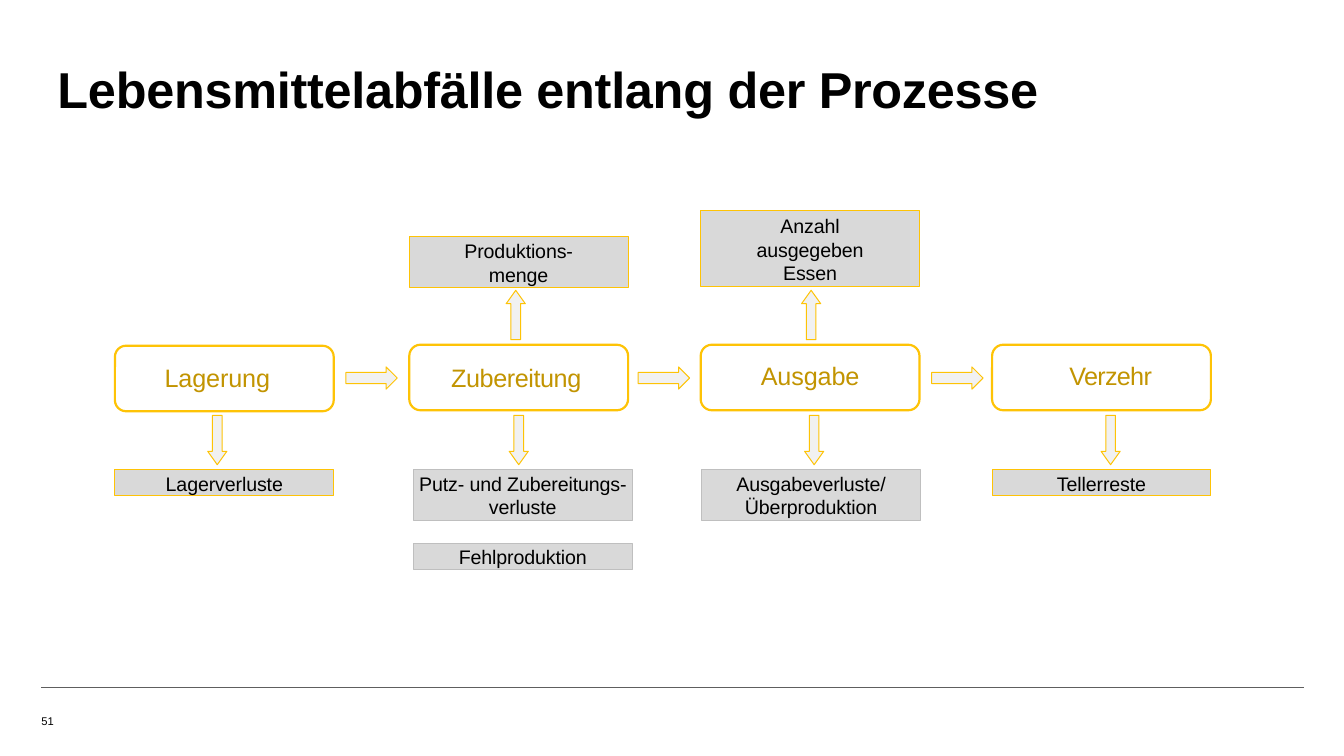
from dataclasses import dataclass

from pptx import Presentation
from pptx.dml.color import RGBColor
from pptx.enum.shapes import MSO_CONNECTOR, MSO_SHAPE
from pptx.enum.text import MSO_ANCHOR, PP_ALIGN
from pptx.oxml.ns import qn
from pptx.util import Emu, Pt

RECTANGLE = MSO_SHAPE.RECTANGLE
ROUNDED = MSO_SHAPE.ROUNDED_RECTANGLE
RIGHT, UP, DOWN = MSO_SHAPE.RIGHT_ARROW, MSO_SHAPE.UP_ARROW, MSO_SHAPE.DOWN_ARROW
STRAIGHT = MSO_CONNECTOR.STRAIGHT
TOP, MIDDLE, BOTTOM = MSO_ANCHOR.TOP, MSO_ANCHOR.MIDDLE, MSO_ANCHOR.BOTTOM
LEFT, CENTER = PP_ALIGN.LEFT, PP_ALIGN.CENTER

EMU_PER_PX = 9144
BOX_WIDTH = 217
STAGE_HEIGHT = 65
LABEL_HEIGHT = 32
LOSS_TOP = 466


@dataclass(frozen=True)
class Theme:
    font: str = "Arial"
    black: str = "000000"
    gold: str = "FEC306"
    dark_gold: str = "C29401"
    box_grey: str = "D9D9D9"
    edge_grey: str = "BFBFBF"
    arrow_grey: str = "F1F1F1"
    rule_grey: str = "5E5E5E"
    title_size: int = 36
    stage_size: int = 18
    box_size: int = 14
    number_size: int = 8


THEME = Theme()

STAGES = [
    ("Lagerung", 114, 343, 158, 357, 115, -10),
    ("Zubereitung", 406, 342, 438, 357, 148, -30),
    ("Ausgabe", 695, 342, 750, 355, 107, -10),
    ("Verzehr", 984, 342, 1054, 355, 95, -50),
]
QUANTITIES = [
    ("Produktions-\vmenge", 406, 235, 50, TOP),
    ("Anzahl\vausgegeben\vEssen", 695, 209, 75, MIDDLE),
]
LOSSES = [
    ("Lagerverluste", 114, LOSS_TOP, 26, THEME.gold),
    ("Putz- und Zubereitungs-verluste", 410, LOSS_TOP, 50, THEME.edge_grey),
    ("Fehlproduktion", 410, 539, 26, THEME.edge_grey),
    ("Ausgabeverluste/\vÜberproduktion", 696, LOSS_TOP, 50, THEME.edge_grey),
    ("Tellerreste", 984, LOSS_TOP, 26, THEME.gold),
]
ARROWS = [
    (RIGHT, 364, 51, 22, 0.5, (343, 633, 924)),
    (DOWN, 412, 19, 49, 0.7, (206, 505, 798, 1092)),
    (UP, 288, 19, 49, 0.7, (502, 795)),
]


def px(*lengths):
    return [Emu(length * EMU_PER_PX) for length in lengths]


def rgb(colour):
    return RGBColor.from_string(colour)


def write(holder, text, size, colour=THEME.black, align=CENTER, anchor=TOP,
          inset=2, before=1.8, spacing=-10, bold=False):
    frame = holder.text_frame
    frame.word_wrap = True
    frame.vertical_anchor = anchor
    frame.margin_left = frame.margin_right = frame.margin_bottom = 0
    frame.margin_top = px(inset)[0]
    paragraph = frame.paragraphs[0]
    paragraph.text = text
    paragraph.alignment = align
    paragraph.space_before = Pt(before)
    paragraph.font.name = THEME.font
    paragraph.font.size = Pt(size)
    paragraph.font.bold = bold
    paragraph.font.color.rgb = rgb(colour)
    for run in paragraph.runs:
        run._r.get_or_add_rPr().set("spc", str(spacing))


def add_label(slide, bounds, text, size, **style):
    write(slide.shapes.add_textbox(*px(*bounds)), text, size, **style)


def add_outlined(slide, preset, bounds, fill, edge=THEME.gold, width=0.72):
    shape = slide.shapes.add_shape(preset, *px(*bounds))
    shape.shadow.inherit = False
    if fill:
        shape.fill.solid()
        shape.fill.fore_color.rgb = rgb(fill)
    else:
        shape.fill.background()
    shape.line.color.rgb = rgb(edge)
    shape.line.width = Pt(width)
    return shape


def add_stage(slide, name, left, top, label_left, label_top, label_width, spacing):
    stage = add_outlined(slide, ROUNDED, (left, top, BOX_WIDTH, STAGE_HEIGHT),
                         None, width=1.56)
    stage.adjustments[0] = 0.17
    add_label(slide, (label_left, label_top, label_width, LABEL_HEIGHT), name,
              THEME.stage_size, colour=THEME.dark_gold, before=1.2, spacing=spacing)


def add_box(slide, text, left, top, height, edge=THEME.gold, anchor=TOP):
    box = add_outlined(slide, RECTANGLE, (left, top, BOX_WIDTH, height),
                       THEME.box_grey, edge)
    write(box, text, THEME.box_size, anchor=anchor)


def add_arrow(slide, preset, bounds, head):
    arrow = add_outlined(slide, preset, bounds, THEME.arrow_grey)
    arrow.adjustments[1] = head


def add_rule(slide, left, right, y):
    rule = slide.shapes.add_connector(STRAIGHT, *px(left, y, right, y))
    rule.line.color.rgb = rgb(THEME.rule_grey)
    rule.line.width = Pt(0.5)
    properties = rule._element.spPr
    properties.append(properties.makeelement(qn("a:effectLst"), {}))


def main():
    presentation = Presentation()
    presentation.slide_width, presentation.slide_height = px(1333, 750)
    slide = presentation.slides.add_slide(presentation.slide_layouts[6])

    add_rule(slide, 41, 1293, 682)
    add_label(slide, (41, 690, 157, 32), "51", THEME.number_size, align=LEFT,
              anchor=BOTTOM, inset=0, before=0, spacing=0)
    add_label(slide, (57, 58, 981, 62), "Lebensmittelabfälle entlang der Prozesse",
              THEME.title_size, align=LEFT, inset=0, before=0, spacing=-20, bold=True)

    for stage in STAGES:
        add_stage(slide, *stage)
    for text, left, top, height, anchor in QUANTITIES:
        add_box(slide, text, left, top, height, anchor=anchor)
    for loss in LOSSES:
        add_box(slide, *loss)
    for preset, top, width, height, head, lefts in ARROWS:
        for left in lefts:
            add_arrow(slide, preset, (left, top, width, height), head)

    presentation.save("out.pptx")


if __name__ == "__main__":
    main()
